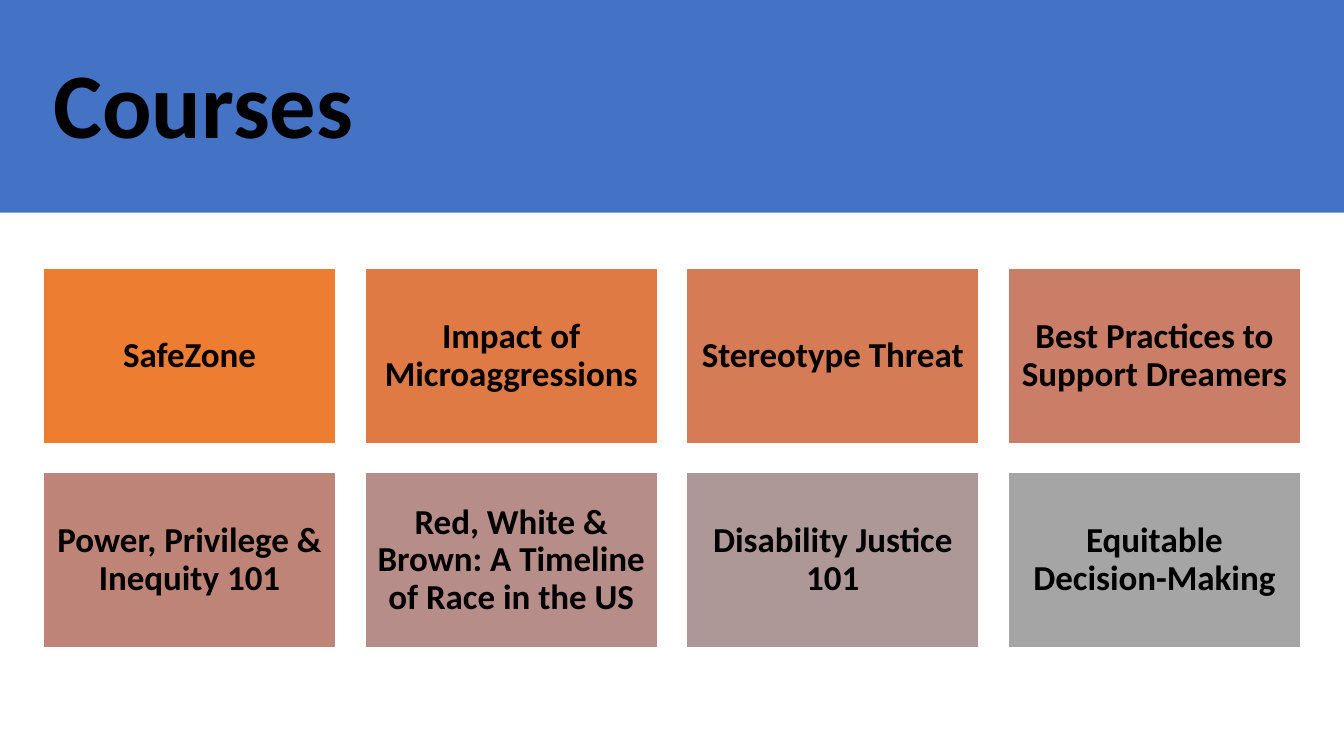
from dataclasses import dataclass

from pptx import Presentation
from pptx.dml.color import RGBColor
from pptx.enum.shapes import MSO_SHAPE
from pptx.enum.text import MSO_ANCHOR, PP_ALIGN
from pptx.util import Inches, Pt

RECTANGLE = MSO_SHAPE.RECTANGLE
MIDDLE = MSO_ANCHOR.MIDDLE
LEFT, CENTER = PP_ALIGN.LEFT, PP_ALIGN.CENTER
TITLE_ONLY = 5


@dataclass(frozen=True)
class Theme:
    font: str = "Calibri"
    title_size: int = 66
    card_size: int = 25
    line_spacing: float = 0.9
    text: str = "000000"
    band: str = "4472C4"
    card_line: str = "FFFFFF"


@dataclass(frozen=True)
class Box:
    """A region of the slide, in inches."""
    left: float
    top: float
    width: float
    height: float

    def lengths(self):
        return [Inches(n) for n in (self.left, self.top, self.width, self.height)]


THEME = Theme()
SLIDE = Box(0, 0, 13.33, 7.5)
MARGIN = 0.43
CONTENT_WIDTH = SLIDE.width - 2 * MARGIN
HEADER = Box(0, 0, SLIDE.width, 2.11)
COURSE_AREA = Box(MARGIN, 2.66, CONTENT_WIDTH, 3.77)
COLUMNS, ROWS, GAP = 4, 2, 0.29

COURSES = [
    ("SafeZone", "ED7D31"),
    ("Impact of Microaggressions", "E07A44"),
    ("Stereotype Threat", "D57B56"),
    ("Best Practices to Support Dreamers", "CA7E67"),
    ("Power, Privilege & Inequity 101", "BF8478"),
    ("Red, White & Brown: A Timeline of Race in the US", "B68D88"),
    ("Disability Justice 101", "AD9897"),
    ("Equitable Decision-Making", "A5A5A5"),
]


def write_text(shape, text, size, alignment):
    text_frame = shape.text_frame
    text_frame.text = text
    text_frame.word_wrap = True
    text_frame.vertical_anchor = MIDDLE
    paragraph = text_frame.paragraphs[0]
    paragraph.alignment = alignment
    paragraph.line_spacing = THEME.line_spacing
    font = paragraph.runs[0].font
    font.name, font.size, font.bold = THEME.font, Pt(size), True
    font.color.rgb = RGBColor.from_string(THEME.text)


def add_rectangle(slide, box, fill):
    shape = slide.shapes.add_shape(RECTANGLE, *box.lengths())
    shape.shadow.inherit = False
    shape.fill.solid()
    shape.fill.fore_color.rgb = RGBColor.from_string(fill)
    shape.line.fill.background()
    return shape


def add_header(slide, box, text):
    band = add_rectangle(slide, box, THEME.band)
    title = slide.shapes.title
    band.element.addnext(title.element)  # the title lies in front of the band
    title_height = 0.69 * box.height
    title_box = Box(box.left + MARGIN, box.top + (box.height - title_height) / 2 + 0.02,
                    CONTENT_WIDTH, title_height)
    title.left, title.top, title.width, title.height = title_box.lengths()
    write_text(title, text, THEME.title_size, LEFT)


def add_course_card(slide, box, name, fill):
    card = add_rectangle(slide, box, fill)
    card.line.color.rgb = RGBColor.from_string(THEME.card_line)
    card.line.width = Pt(1)
    text_frame = card.text_frame
    text_frame.margin_left = text_frame.margin_right = Inches(0.1)
    text_frame.margin_top = text_frame.margin_bottom = Inches(0.1)
    write_text(card, name, THEME.card_size, CENTER)


def add_course_grid(slide, box, courses):
    width = (box.width - (COLUMNS - 1) * GAP) / COLUMNS
    height = (box.height - (ROWS - 1) * GAP) / ROWS
    for index, (name, fill) in enumerate(courses):
        row, column = divmod(index, COLUMNS)
        cell = Box(box.left + column * (width + GAP),
                   box.top + row * (height + GAP), width, height)
        add_course_card(slide, cell, name, fill)


def main():
    presentation = Presentation()
    presentation.slide_width = Inches(SLIDE.width)
    presentation.slide_height = Inches(SLIDE.height)
    slide = presentation.slides.add_slide(presentation.slide_layouts[TITLE_ONLY])
    add_header(slide, HEADER, "Courses")
    add_course_grid(slide, COURSE_AREA, COURSES)
    presentation.save("out.pptx")


if __name__ == "__main__":
    main()
